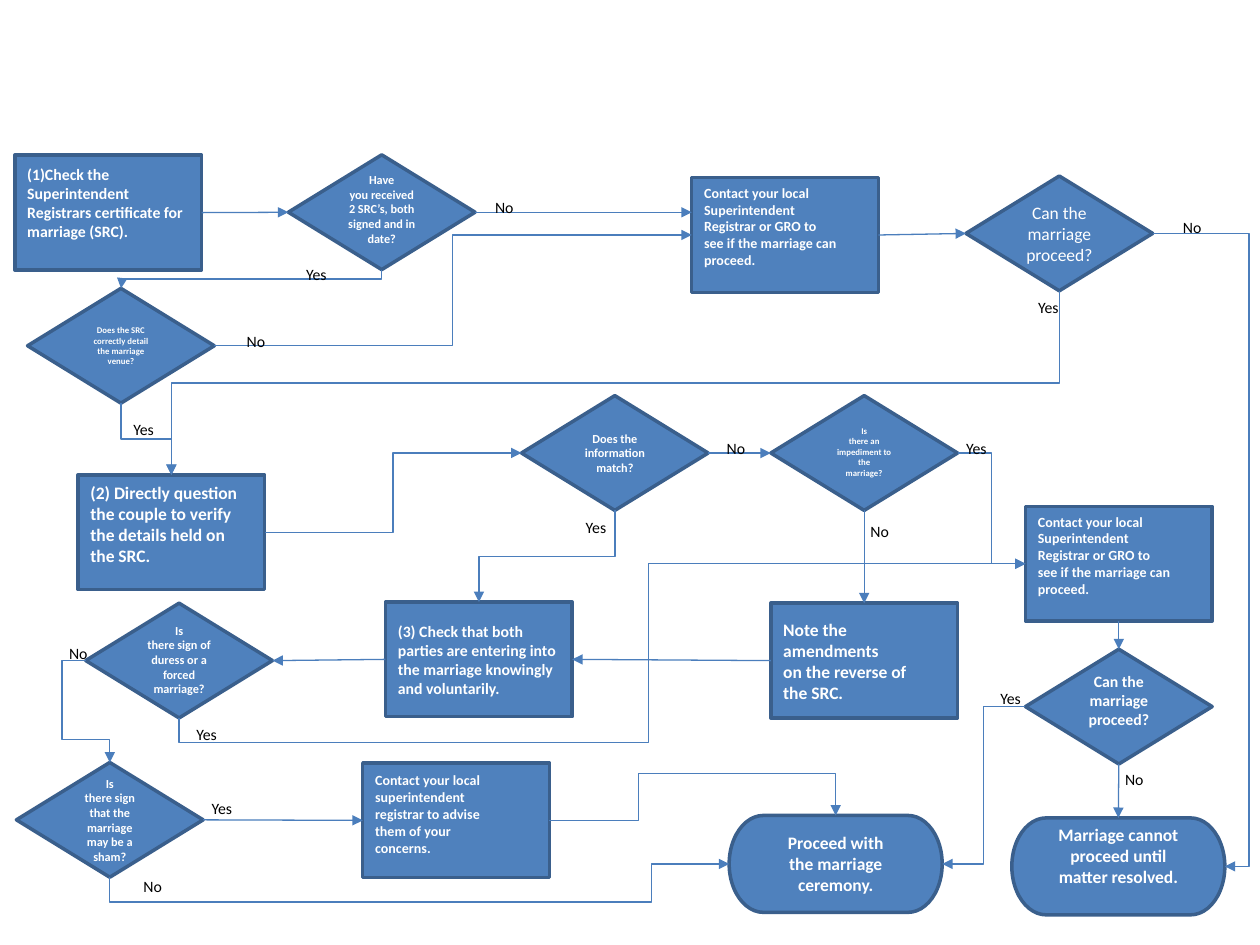
from lxml.etree import SubElement
from pptx import Presentation
from pptx.dml.color import RGBColor
from pptx.enum.shapes import MSO_CONNECTOR, MSO_SHAPE
from pptx.enum.text import MSO_ANCHOR, PP_ALIGN
from pptx.oxml.ns import qn
from pptx.util import Pt

COLORS = {"fill": "4F81BD", "border": "3A5F8C", "arrow": "4B7EBC", "light": "FFFFFF", "dark": "000000"}
TOP, LEFT, BOTTOM, RIGHT = range(4)
STEP_SIZE = (106.7, 65.6)
END_SIZE = (121.7, 55.4)


class Flowchart:
    font = "Calibri"
    label_size = 9

    def __init__(self, slide):
        self.slide = slide

    def color(self, name):
        return RGBColor.from_string(COLORS[name])

    def fill_text(self, frame, text, size, color, bold, align):
        frame.word_wrap = True
        frame.text = text
        for paragraph in frame.paragraphs:
            paragraph.alignment = align
            for run in paragraph.runs:
                run.font.name = self.font
                run.font.size = Pt(size)
                run.font.bold = bold
                run.font.color.rgb = self.color(color)

    def node(self, preset, place, extent, text, size, lift, bold, align):
        shape = self.slide.shapes.add_shape(preset, *map(Pt, place + extent))
        shape.shadow.inherit = False
        shape.fill.solid()
        shape.fill.fore_color.rgb = self.color("fill")
        shape.line.color.rgb = self.color("border")
        shape.line.width = Pt(2)
        shape.text_frame.vertical_anchor = MSO_ANCHOR.MIDDLE
        shape.text_frame.margin_bottom = Pt(3.6 + lift)
        self.fill_text(shape.text_frame, text, size, "light", bold, align)
        return shape

    def step(self, x, y, text, size, lift=0):
        return self.node(MSO_SHAPE.RECTANGLE, (x, y), STEP_SIZE, text, size, lift, True, PP_ALIGN.LEFT)

    def decision(self, x, y, text, size, lift=0, bold=True):
        return self.node(MSO_SHAPE.FLOWCHART_DECISION, (x, y), STEP_SIZE, text, size, lift, bold, PP_ALIGN.CENTER)

    def outcome(self, x, y, text, size, lift=0):
        return self.node(MSO_SHAPE.FLOWCHART_TERMINATOR, (x, y), END_SIZE, text, size, lift, True, PP_ALIGN.CENTER)

    def label(self, text, x, y):
        box = self.slide.shapes.add_textbox(Pt(x), Pt(y), Pt(30.2), Pt(18))
        self.fill_text(box.text_frame, text, self.label_size, "dark", False, PP_ALIGN.LEFT)

    def style_arrow(self, connector):
        connector.line.color.rgb = self.color("arrow")
        connector.line.width = Pt(0.75)
        properties = connector._element.spPr
        SubElement(properties.find(qn("a:ln")), qn("a:tailEnd"), type="triangle")
        SubElement(properties, qn("a:effectLst"))

    def arrow(self, source, source_side, target, target_side):
        connector = self.slide.shapes.add_connector(MSO_CONNECTOR.STRAIGHT, 0, 0, 0, 0)
        connector.begin_connect(source, source_side)
        connector.end_connect(target, target_side)
        self.style_arrow(connector)

    def level_arrow(self, source, target):
        x, y = self.side_point(source, RIGHT)
        connector = self.slide.shapes.add_connector(MSO_CONNECTOR.STRAIGHT, x, y, target.left, y)
        connector.begin_connect(source, RIGHT)
        self.style_arrow(connector)

    def side_point(self, shape, side):
        across, down = {TOP: (1, 0), LEFT: (0, 1), BOTTOM: (1, 2), RIGHT: (2, 1)}[side]
        return shape.left + shape.width * across // 2, shape.top + shape.height * down // 2

    def elbow(self, source, source_side, target, target_side, *turns):
        start = self.side_point(source, source_side)
        end = self.side_point(target, target_side)
        upright = source_side in (TOP, BOTTOM)
        run, rise = end[0] - start[0], end[1] - start[1]
        if upright:
            run, rise = rise, -run
        center_x, center_y = (start[0] + end[0]) // 2, (start[1] + end[1]) // 2
        connector = self.slide.shapes.add_connector(
            MSO_CONNECTOR.ELBOW,
            center_x - run // 2, center_y - rise // 2,
            center_x + run // 2, center_y + rise // 2)
        properties = connector._element.spPr
        if upright:
            properties.find(qn("a:xfrm")).set("rot", "5400000")
        geometry = properties.find(qn("a:prstGeom"))
        if len(turns) == 2:
            geometry.set("prst", "bentConnector4")
        guides = geometry.find(qn("a:avLst"))
        axes = (1, 0) if upright else (0, 1)
        for number, (turn, axis) in enumerate(zip(turns, axes), 1):
            ratio = (Pt(turn) - start[axis]) / (end[axis] - start[axis])
            name = f"adj{number}" if len(turns) == 2 else "adj1"
            SubElement(guides, qn("a:gd"), name=name, fmla=f"val {round(ratio * 100000)}")
        self.style_arrow(connector)


def main():
    presentation = Presentation()
    presentation.slide_width, presentation.slide_height = Pt(720), Pt(540)
    chart = Flowchart(presentation.slides.add_slide(presentation.slide_layouts[6]))

    contact_text = ("Contact your local\vSuperintendent\vRegistrar or GRO to\v"
                    "see if the marriage can\vproceed.")
    check = chart.step(8.5, 88.7, "(1)Check the Superintendent Registrars certificate for marriage (SRC).", 9, 11)
    received = chart.decision(164.8, 88.5, "Have\nyou received\v2 SRC’s, both\vsigned and in\ndate?", 7, 3.7)
    contact = chart.step(395.3, 101.5, contact_text, 8, 9.8)
    proceed = chart.decision(552, 100.6, "Can the marriage proceed?", 10, bold=False)
    venue = chart.decision(15.8, 164.8, "Does the SRC correctly detail the marriage venue?", 5)
    question = chart.step(44.6, 271.4, "(2) Directly question the couple to verify the details held on the SRC.", 10, 9.8)
    match = chart.decision(298, 226.1, "Does the\vinformation\vmatch?", 7)
    impediment = chart.decision(440.5, 226.1, "Is\vthere an\vimpediment to the\vmarriage?", 5, 1.2)
    contact_again = chart.step(586, 289.4, contact_text, 8, 9.8)
    amendments = chart.step(440.5, 344.7, "Note the amendments\von the reverse of\vthe SRC.", 10)
    consent = chart.step(220.3, 344, "(3) Check that both parties are entering into the marriage knowingly and voluntarily.", 9)
    duress = chart.decision(49, 344.7, "Is\vthere sign of\vduress or a forced\vmarriage?", 7, 1.2)
    sham = chart.decision(9.4, 435.7, "Is\vthere sign\vthat the marriage\vmay be a\vsham?", 7)
    advise = chart.step(207.3, 436, "Contact your local\vsuperintendent\vregistrar to advise\vthem of your\vconcerns.", 8, 7.3)
    stopped = chart.outcome(578.2, 467.4, "Marriage cannot\vproceed until\vmatter resolved.", 10, 12.2)
    ceremony = chart.outcome(416.7, 466, "Proceed with\vthe marriage\vceremony.", 10)
    proceed_again = chart.decision(586, 371, "Can the\vmarriage\vproceed?", 9, 7.3)

    chart.level_arrow(received, contact)
    for link in (
        (check, RIGHT, received, LEFT),
        (contact, RIGHT, proceed, LEFT),
        (match, RIGHT, impediment, LEFT),
        (impediment, BOTTOM, amendments, TOP),
        (amendments, LEFT, consent, RIGHT),
        (consent, LEFT, duress, RIGHT),
        (sham, RIGHT, advise, LEFT),
        (contact_again, BOTTOM, proceed_again, TOP),
        (proceed_again, BOTTOM, stopped, TOP),
    ):
        chart.arrow(*link)

    for route in (
        (received, BOTTOM, venue, TOP),
        (venue, RIGHT, contact, LEFT, 258.7),
        (venue, BOTTOM, question, TOP),
        (proceed, BOTTOM, question, TOP),
        (proceed, RIGHT, stopped, RIGHT, 713.7),
        (question, RIGHT, match, LEFT),
        (match, BOTTOM, consent, TOP),
        (impediment, RIGHT, contact_again, LEFT),
        (duress, BOTTOM, contact_again, LEFT, 424.3, 370.6),
        (duress, LEFT, sham, TOP, 35.4, 422.8),
        (sham, BOTTOM, ceremony, LEFT, 515.5, 372.6),
        (advise, RIGHT, ceremony, TOP, 365, 442.1),
        (proceed_again, LEFT, ceremony, RIGHT),
    ):
        chart.elbow(*route)

    answers = {
        "Yes": ((167.8, 147.6), (586.1, 166.3), (69.1, 236.2), (327.6, 292.3), (545, 247),
                (105.1, 410.4), (564.5, 390.2), (113.8, 452.9)),
        "No": ((275.8, 109.4), (668.9, 121), (133.9, 185.8), (408.2, 247), (490.3, 294.5),
               (635.8, 436.3), (32.4, 364.3), (74.9, 497.5)),
    }
    for answer, places in answers.items():
        for x, y in places:
            chart.label(answer, x, y)

    presentation.save("out.pptx")


if __name__ == "__main__":
    main()
